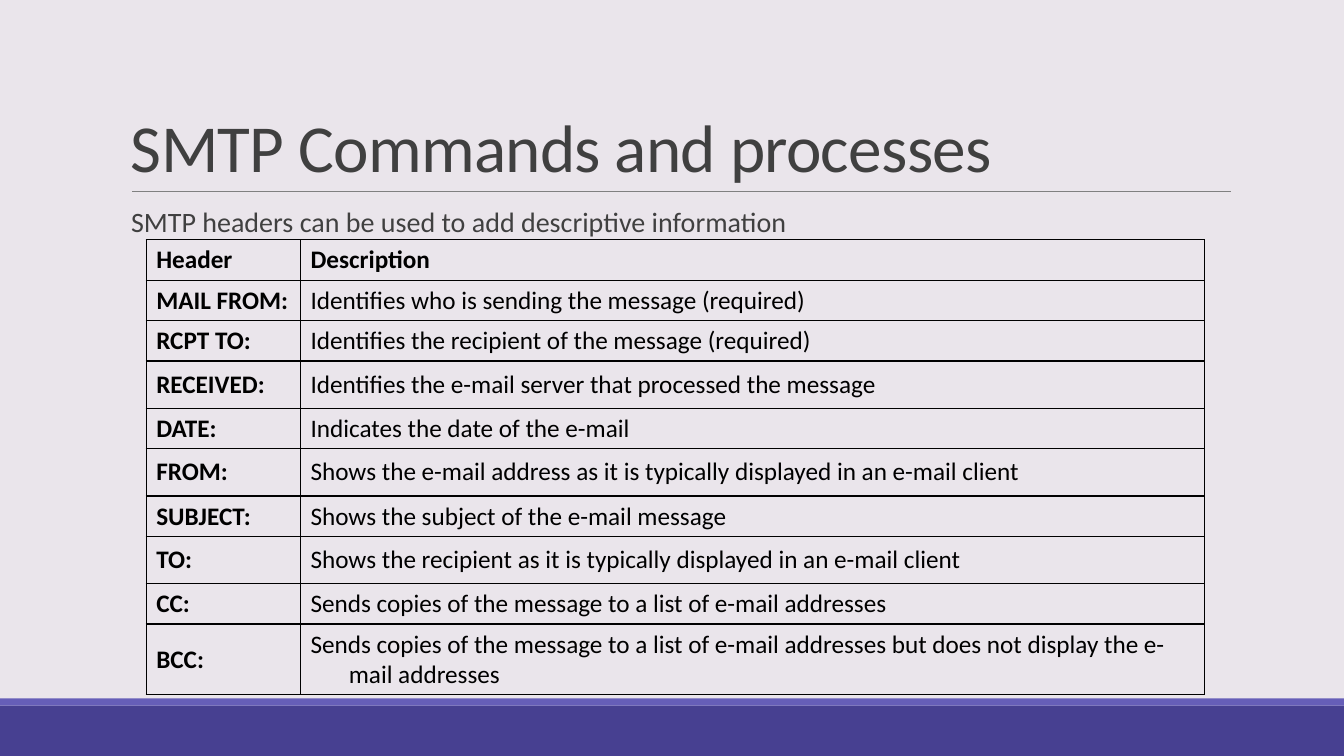
import lxml.etree
import pptx
import pptx.dml.color
import pptx.enum.shapes
import pptx.enum.text
import pptx.oxml.ns
import pptx.util

Inches = pptx.util.Inches
Pt = pptx.util.Pt
qn = pptx.oxml.ns.qn
MIDDLE = pptx.enum.text.MSO_ANCHOR.MIDDLE


def color(value):
    return pptx.dml.color.RGBColor.from_string(value)


def write(frame, text, size=18, fill="000000", bold=False, margin=0, indent=0,
          line_spacing=1.0, before=0, after=0, tracking=0):
    """Put one formatted paragraph in a text frame; margin and indent are in inches."""
    frame.word_wrap = True
    paragraph = frame.paragraphs[0]
    paragraph.line_spacing = line_spacing
    paragraph.space_before, paragraph.space_after = Pt(before), Pt(after)
    properties = paragraph._p.get_or_add_pPr()
    properties.set("marL", str(Inches(margin)))
    properties.set("indent", str(Inches(indent)))
    run = paragraph.add_run()
    run.text = text
    run.font.name, run.font.size, run.font.bold = "Calibri", Pt(size), bold
    run.font.color.rgb = color(fill)
    run._r.get_or_add_rPr().set("spc", str(int(tracking * 100)))


presentation = pptx.Presentation()
presentation.slide_width, presentation.slide_height = Inches(13.33), Inches(7.5)
slide = presentation.slides.add_slide(presentation.slide_layouts[6])
slide.background.fill.solid()
slide.background.fill.fore_color.rgb = color("EAE5EB")

# Footer bands
for top, height, fill in [(7, 0.5, "474091"), (6.93, 0.07, "665EB8")]:
    band = slide.shapes.add_shape(pptx.enum.shapes.MSO_SHAPE.RECTANGLE,
                                  0, Inches(top), Inches(13.33), Inches(height))
    band.shadow.inherit = False
    band.fill.solid()
    band.fill.fore_color.rgb = color(fill)
    band.line.fill.background()

# Rule under the title
rule = slide.shapes.add_connector(pptx.enum.shapes.MSO_CONNECTOR.STRAIGHT,
                                  Inches(1.31), Inches(1.9), Inches(12.21), Inches(1.9))
rule.line.color.rgb = color("808080")
rule.line.width = Pt(0.5)
lxml.etree.SubElement(rule._element.spPr, qn("a:effectLst"))

# Title and lead sentence
title = slide.shapes.add_textbox(Inches(1.2), Inches(0.31), Inches(11), Inches(1.59))
title.text_frame.vertical_anchor = pptx.enum.text.MSO_ANCHOR.BOTTOM
write(title.text_frame, "SMTP Commands and processes", size=48, fill="404040",
      line_spacing=0.85, tracking=-0.5)

lead = slide.shapes.add_textbox(Inches(1.2), Inches(2.02), Inches(11), Inches(4.4))
lead.text_frame.margin_left = lead.text_frame.margin_right = 0
write(lead.text_frame, "SMTP headers can be used to add descriptive information",
      size=20, fill="404040", margin=0.1, line_spacing=0.9, before=12, after=2)

# Table of headers: row height, header, description
rows = [
    (0.36, "Header", "Description"),
    (0.36, "MAIL FROM:", "Identifies who is sending the message (required)"),
    (0.36, "RCPT TO:", "Identifies the recipient of the message (required)"),
    (0.47, "RECEIVED:", "Identifies the e-mail server that processed the message"),
    (0.36, "DATE:", "Indicates the date of the e-mail"),
    (0.47, "FROM:", "Shows the e-mail address as it is typically displayed in an e-mail client"),
    (0.36, "SUBJECT:", "Shows the subject of the e-mail message"),
    (0.47, "TO:", "Shows the recipient as it is typically displayed in an e-mail client"),
    (0.36, "CC:", "Sends copies of the message to a list of e-mail addresses"),
    (0.64, "BCC:", "Sends copies of the message to a list of e-mail addresses "
                   "but does not display the e-mail addresses"),
]
table = slide.shapes.add_table(len(rows), 2, Inches(1.45), Inches(2.38),
                               Inches(10.5), Inches(4.52)).table
table.first_row = table.horz_banding = False
table.columns[0].width, table.columns[1].width = Inches(1.53), Inches(8.97)

for row_index, (height, *texts) in enumerate(rows):
    table.rows[row_index].height = Inches(height)
    for column_index, text in enumerate(texts):
        cell = table.cell(row_index, column_index)
        cell.vertical_anchor = MIDDLE
        write(cell.text_frame, text, bold=row_index == 0 or column_index == 0,
              margin=0.38, indent=-0.38)
        properties = cell._tc.get_or_add_tcPr()
        for side in ("a:lnL", "a:lnR", "a:lnT", "a:lnB"):
            border = lxml.etree.SubElement(properties, qn(side), w=str(Pt(1)))
            solid = lxml.etree.SubElement(border, qn("a:solidFill"))
            lxml.etree.SubElement(solid, qn("a:srgbClr"), val="000000")
        cell.fill.background()

presentation.save("out.pptx")
